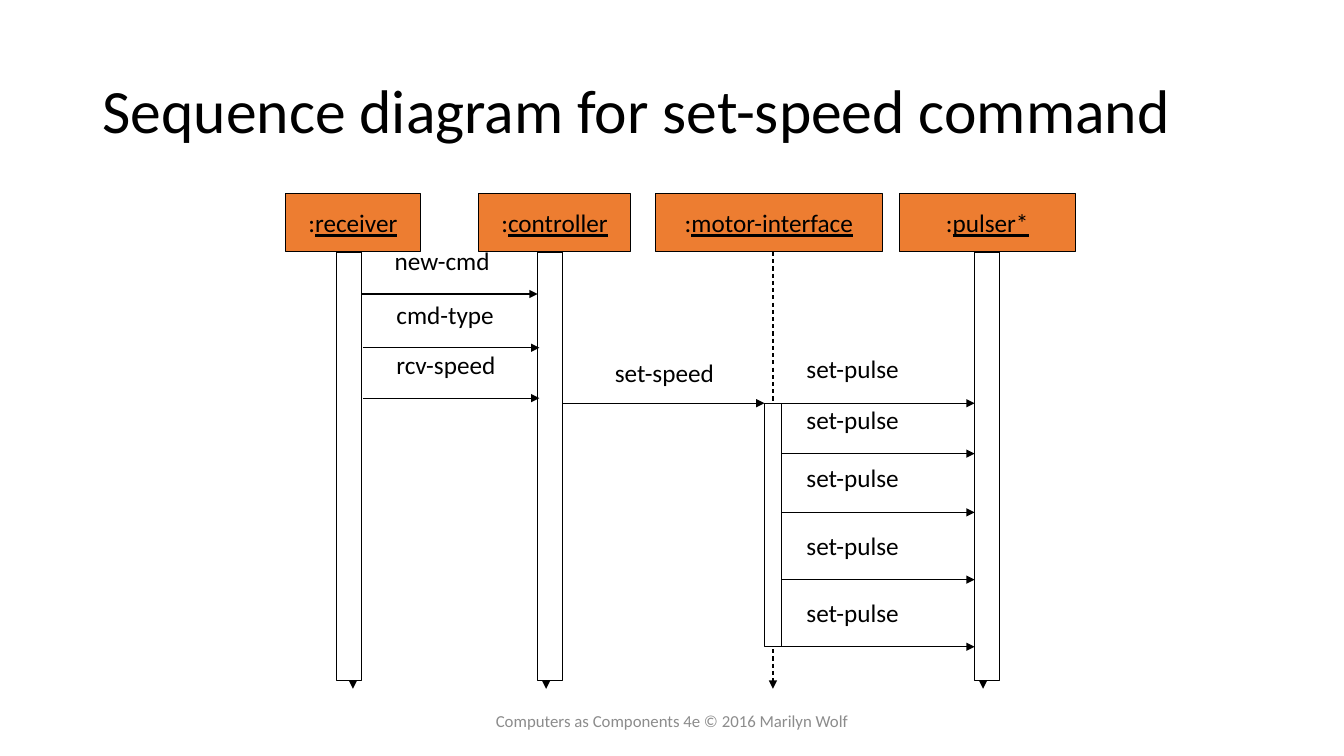
from lxml.etree import SubElement
from pptx import Presentation
from pptx.dml.color import RGBColor
from pptx.enum.dml import MSO_LINE
from pptx.enum.shapes import MSO_CONNECTOR, MSO_SHAPE
from pptx.enum.text import MSO_ANCHOR, MSO_AUTO_SIZE, PP_ALIGN
from pptx.oxml.ns import qn
from pptx.util import Inches, Pt

COLORS = {"ink": "000000", "object": "ED7D31", "bar": "FFFFFF", "footer": "8C8C8C"}

presentation = Presentation()
presentation.slide_width = Inches(13.33)
presentation.slide_height = Inches(7.5)
slide = presentation.slides.add_slide(presentation.slide_layouts[5])

# The grid has 12 units to the inch: 160 columns by 90 rows
UNIT = Inches(1) / 12
TEXT_HEIGHT = 4.8


def grid(*lengths):
    return [round(length * UNIT) for length in lengths]


def write(shape, texts, size=18, color="ink", align=PP_ALIGN.LEFT,
          anchor=MSO_ANCHOR.TOP, wrap=False):
    frame = shape.text_frame
    settings = {"word_wrap": wrap, "auto_size": MSO_AUTO_SIZE.NONE,
                "vertical_anchor": anchor}
    for name, value in settings.items():
        setattr(frame, name, value)
    paragraph = frame.paragraphs[0]
    paragraph.alignment = align
    for position, text in enumerate(texts):
        run = paragraph.add_run()
        run.text = text
        font_format = {"name": "Calibri", "size": Pt(size), "underline": position > 0}
        for name, value in font_format.items():
            setattr(run.font, name, value)
        run.font.color.rgb = RGBColor.from_string(COLORS[color])


# Title
title = slide.shapes.title
title.left, title.top, title.width, title.height = grid(11, 4.8, 138, 17.4)
write(title, ["Sequence diagram for set-speed command"], size=44,
      anchor=MSO_ANCHOR.MIDDLE, wrap=True)
title.text_frame.paragraphs[0].line_spacing = 0.9

# Objects: name, left, width, lifeline column, activation bar (left, top, width, height)
HEAD_TOP, HEAD_HEIGHT, LIFE_TOP, LIFE_END = 23, 7, 30, 82
objects = [
    ("receiver", 34, 16, 42, (40, 30, 3, 51)),
    ("controller", 57, 18, 65, (64, 30, 3, 51)),
    ("motor-interface", 78, 27, 92, (91, 48, 2, 29)),
    ("pulser*", 107, 21, 117, (116, 30, 3, 51)),
]

# Messages: label, label left, label top, label width, arrow start, arrow end, arrow row
messages = [
    ("new-cmd", 45.8, 28.6, 14, 43, 64, 35),
    ("cmd-type", 46, 35, 14.2, 43.2, 64.2, 41.4),
    ("rcv-speed", 46, 41, 14.4, 43.2, 64.2, 47.4),
    ("set-speed", 72, 42, 14.4, 67, 91, 48),
]
messages += [("set-pulse", 94.8, row - 6.5, 13.7, 93, 116, row)
             for row in (48, 54, 61, 69, 77)]

# Object heads and activation bars; lifelines run behind the bars
heads = [((left, HEAD_TOP, width, HEAD_HEIGHT), "object", name)
         for name, left, width, _, _ in objects]
bars = [(bar, "bar", None) for *_, bar in objects]
lifelines = [(column, LIFE_TOP, column, LIFE_END, MSO_LINE.DASH)
             for _, _, _, column, _ in objects]
arrows = [(start, row, end, row, MSO_LINE.SOLID)
          for *_, start, end, row in messages]

for boxes, lines in ((heads, lifelines), (bars, arrows)):
    for box, fill, name in boxes:
        shape = slide.shapes.add_shape(MSO_SHAPE.RECTANGLE, *grid(*box))
        shape.shadow.inherit = False
        shape.fill.solid()
        shape.fill.fore_color.rgb = RGBColor.from_string(COLORS[fill])
        shape.line.color.rgb = RGBColor.from_string(COLORS["ink"])
        shape.line.width = Pt(0.75)
        if name:
            write(shape, [":", name], align=PP_ALIGN.CENTER, anchor=MSO_ANCHOR.MIDDLE)

    for *ends, dash in lines:
        connector = slide.shapes.add_connector(MSO_CONNECTOR.STRAIGHT, *grid(*ends))
        connector.line.color.rgb = RGBColor.from_string(COLORS["ink"])
        connector.line.width = Pt(0.75)
        connector.line.dash_style = dash
        properties = connector.line._get_or_add_ln()
        SubElement(properties, qn("a:tailEnd"), type="triangle")
        SubElement(properties.getparent(), qn("a:effectLst"))

# Message labels
for label, left, top, width, *_ in messages:
    write(slide.shapes.add_textbox(*grid(left, top, width, TEXT_HEIGHT)), [label])

# Footer
footer = slide.shapes.add_textbox(*grid(53, 83.4, 54, TEXT_HEIGHT))
write(footer, ["Computers as Components 4e © 2016 Marilyn Wolf"], size=12,
      color="footer", align=PP_ALIGN.CENTER, anchor=MSO_ANCHOR.MIDDLE, wrap=True)

presentation.save("out.pptx")
